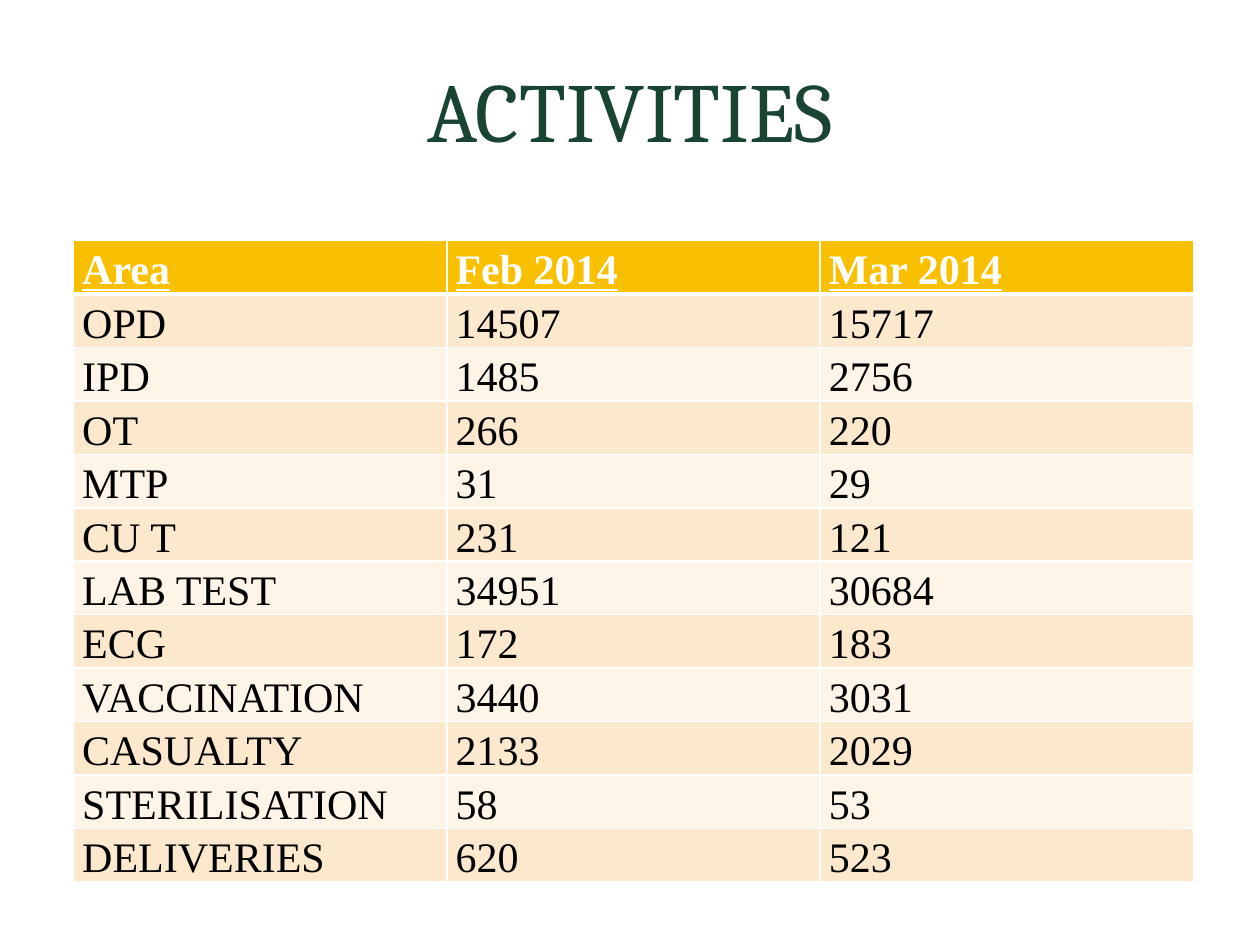
from dataclasses import dataclass

from lxml import etree
from pptx import Presentation
from pptx.dml.color import RGBColor
from pptx.enum.text import MSO_ANCHOR, PP_ALIGN
from pptx.oxml.ns import qn
from pptx.util import Pt

CENTER, JUSTIFY = PP_ALIGN.CENTER, PP_ALIGN.JUSTIFY
TOP, MIDDLE = MSO_ANCHOR.TOP, MSO_ANCHOR.MIDDLE
TITLE_ONLY = 5


@dataclass(frozen=True)
class Theme:
    title_font: str = "Cambria"
    table_font: str = "Times New Roman"
    title_size: float = 48
    table_size: float = 24
    title_color: str = "194431"
    header_text: str = "FFFFFF"
    body_text: str = "000000"
    header_fill: str = "F8C000"
    band_fills: tuple = ("FCE8CC", "FEF4E7")
    border: str = "FFFFFF"


THEME = Theme()
TITLE_BOX = (60.5, 6.5, 599, 112)
TABLE_BOX = (42, 137.5, 640, 354)

ACTIVITIES = [
    ("Area", "Feb 2014", "Mar 2014"),
    ("OPD", "14507", "15717"),
    ("IPD", "1485", "2756"),
    ("OT", "266", "220"),
    ("MTP", "31", "29"),
    ("CU T", "231", "121"),
    ("LAB TEST", "34951", "30684"),
    ("ECG", "172", "183"),
    ("VACCINATION", "3440", "3031"),
    ("CASUALTY", "2133", "2029"),
    ("STERILISATION", "58", "53"),
    ("DELIVERIES", "620", "523"),
]


def style_text(span, font, size, color):
    span.font.name = font
    span.font.size = Pt(size)
    span.font.color.rgb = RGBColor.from_string(color)


def add_title(page, box, text):
    title = page.shapes.title
    title.left, title.top, title.width, title.height = map(Pt, box)
    frame = title.text_frame
    frame.text = text
    frame.vertical_anchor = MIDDLE
    para = frame.paragraphs[0]
    para.alignment = CENTER
    style_text(para.runs[0], THEME.title_font, THEME.title_size, THEME.title_color)


def add_borders(cell, bottom_width, top_width):
    properties = cell._tc.get_or_add_tcPr()
    widths = {"L": 1, "R": 1, "T": top_width, "B": bottom_width}
    for side, width in widths.items():
        line = etree.SubElement(properties, qn(f"a:ln{side}"), w=str(Pt(width)))
        fill = etree.SubElement(line, qn("a:solidFill"))
        etree.SubElement(fill, qn("a:srgbClr"), val=THEME.border)


def fill_cell(cell, text, row_index):
    is_header = row_index == 0
    cell.margin_left = cell.margin_right = Pt(5)
    cell.margin_top = cell.margin_bottom = Pt(0)
    cell.vertical_anchor = TOP

    # Borders come before the fill in the cell properties
    add_borders(cell, 3 if is_header else 1, 3 if row_index == 1 else 1)
    color = THEME.header_fill if is_header else THEME.band_fills[(row_index - 1) % 2]
    cell.fill.solid()
    cell.fill.fore_color.rgb = RGBColor.from_string(color)

    cell.text_frame.text = text
    para = cell.text_frame.paragraphs[0]
    para.alignment = JUSTIFY
    para.line_spacing = 1.15
    para.space_after = Pt(12)
    span = para.runs[0]
    style_text(span, THEME.table_font, THEME.table_size,
               THEME.header_text if is_header else THEME.body_text)
    span.font.bold = span.font.underline = is_header


def add_activity_table(page, box, rows):
    left, top, width, height = box
    column_count = len(rows[0])
    table = page.shapes.add_table(len(rows), column_count, *map(Pt, box)).table
    for column in table.columns:
        column.width = Pt(width / column_count)
    for row_index, values in enumerate(rows):
        table.rows[row_index].height = Pt(height / len(rows))
        for column_index, text in enumerate(values):
            fill_cell(table.cell(row_index, column_index), text, row_index)


def main():
    deck = Presentation()
    deck.slide_width, deck.slide_height = Pt(720), Pt(540)
    page = deck.slides.add_slide(deck.slide_layouts[TITLE_ONLY])
    add_title(page, TITLE_BOX, "ACTIVITIES")
    add_activity_table(page, TABLE_BOX, ACTIVITIES)
    deck.save("out.pptx")


if __name__ == "__main__":
    main()
